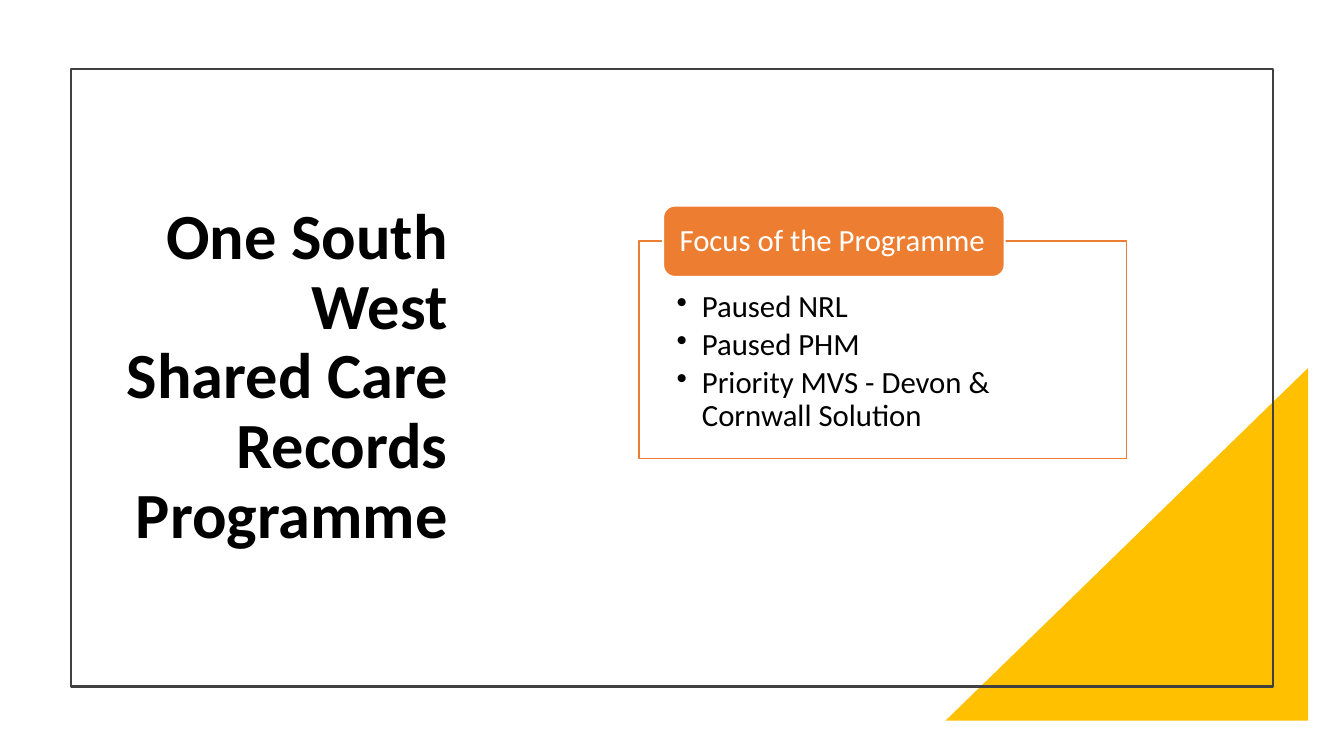
from dataclasses import dataclass

from lxml.etree import SubElement
from pptx import Presentation
from pptx.dml.color import RGBColor
from pptx.enum.shapes import MSO_SHAPE
from pptx.enum.text import MSO_ANCHOR, PP_ALIGN
from pptx.oxml.ns import qn
from pptx.util import Cm, Pt


@dataclass(frozen=True)
class Theme:
    font: str = "Calibri"
    title_size: float = 46
    body_size: float = 22
    text: str = "000000"
    white: str = "FFFFFF"
    frame: str = "404040"
    corner: str = "FFC000"
    accent: str = "ED7D31"


class SlideBuilder:
    def __init__(self, slide, theme):
        self.slide = slide
        self.theme = theme

    def shape(self, preset, box, fill=None, line=None, line_width=1.0, alpha=None):
        item = self.slide.shapes.add_shape(preset, *map(Cm, box))
        item.shadow.inherit = False
        if fill:
            item.fill.solid()
            item.fill.fore_color.rgb = RGBColor.from_string(fill)
        else:
            item.fill.background()
        if alpha is not None:
            color = item._element.spPr.find(qn("a:solidFill"))[0]
            SubElement(color, qn("a:alpha"), val=str(alpha * 1000))
        if line:
            item.line.color.rgb = RGBColor.from_string(line)
            item.line.width = Pt(line_width)
        else:
            item.line.fill.background()
        return item

    def textbox(self, box):
        return self.slide.shapes.add_textbox(*map(Cm, box))

    def set_text(self, item, lines, size, color, insets, anchor=MSO_ANCHOR.MIDDLE,
                 align=PP_ALIGN.LEFT, bold=False, space_after=0, bulleted=False):
        frame = item.text_frame
        frame.word_wrap = True
        frame.vertical_anchor = anchor
        (frame.margin_left, frame.margin_top,
         frame.margin_right, frame.margin_bottom) = map(Cm, insets)
        frame.text = "\n".join(lines)
        for paragraph in frame.paragraphs:
            paragraph.alignment = align
            paragraph.line_spacing = 0.9
            paragraph.space_after = Pt(space_after)
            paragraph.font.name = self.theme.font
            paragraph.font.size = Pt(size)
            paragraph.font.bold = bold
            paragraph.font.color.rgb = RGBColor.from_string(color)
            if bulleted:
                self.bullet(paragraph)

    def bullet(self, paragraph, indent=Cm(0.64)):
        properties = paragraph._p.get_or_add_pPr()
        properties.set("marL", str(indent))
        properties.set("indent", str(-indent))
        bullet = properties.makeelement(qn("a:buChar"), {"char": "•"})
        properties.insert_element_before(bullet, "a:tabLst", "a:defRPr", "a:extLst")


def main():
    deck = Presentation()
    deck.slide_width, deck.slide_height = Cm(33.87), Cm(19.05)
    theme = Theme()
    builder = SlideBuilder(deck.slides.add_slide(deck.slide_layouts[6]), theme)

    # Corner triangle and page frame
    corner = builder.shape(MSO_SHAPE.RIGHT_TRIANGLE, (23.83, 9.27, 9.14, 8.89),
                           fill=theme.corner)
    corner._element.spPr.find(qn("a:xfrm")).set("flipH", "1")
    builder.shape(MSO_SHAPE.RECTANGLE, (1.78, 1.73, 30.3, 15.57),
                  line=theme.frame, line_width=1.5)

    # Focus panel with its bullets
    focus_panel = builder.shape(MSO_SHAPE.RECTANGLE, (16.1, 6.07, 12.29, 5.49),
                                fill=theme.white, alpha=90, line=theme.accent)
    focus_points = ["Paused NRL", "Paused PHM",
                    "Priority MVS - Devon & Cornwall Solution"]
    builder.set_text(focus_panel, focus_points, theme.body_size, theme.text,
                     (0.95, 1.27, 0.95, 0.43), anchor=MSO_ANCHOR.TOP,
                     space_after=3.3, bulleted=True)

    # Focus heading on the panel's top edge
    focus_heading = builder.shape(MSO_SHAPE.ROUNDED_RECTANGLE,
                                  (16.71, 5.18, 8.61, 1.8), fill=theme.accent,
                                  line=theme.white, line_width=1.5)
    builder.set_text(focus_heading, ["Focus of the Programme"], theme.body_size,
                     theme.white, (0.33, 0, 0.2, 0))

    # Slide title
    title = builder.textbox((2.79, 3.3, 8.74, 12.45))
    builder.set_text(title, ["One South West Shared Care Records Programme"],
                     theme.title_size, theme.text, (0.25, 0.13, 0.25, 0.13),
                     align=PP_ALIGN.RIGHT, bold=True, space_after=6)

    deck.save("out.pptx")


if __name__ == "__main__":
    main()
